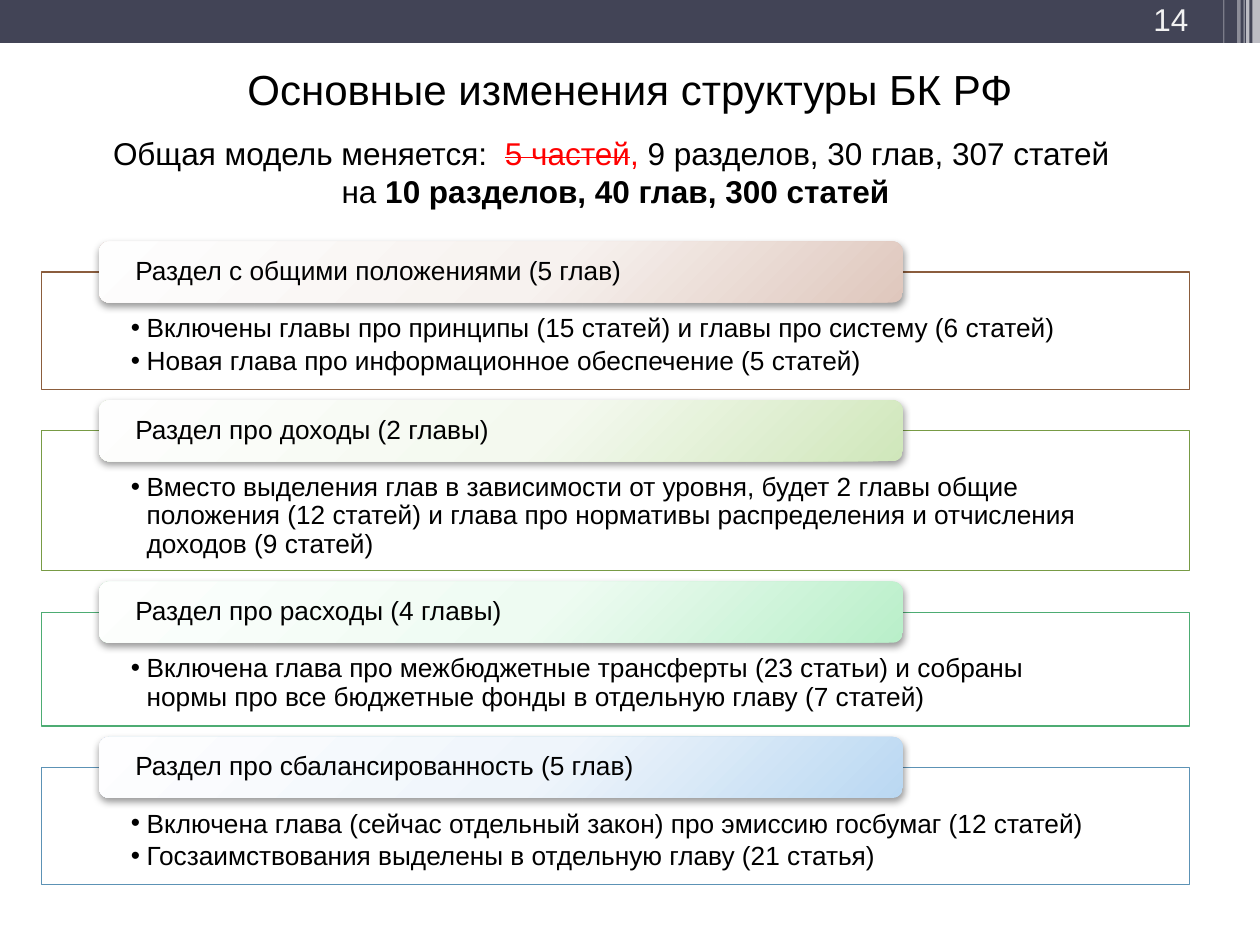
from dataclasses import dataclass

from lxml.etree import SubElement
from pptx import Presentation
from pptx.dml.color import RGBColor
from pptx.enum.shapes import MSO_SHAPE
from pptx.enum.text import MSO_ANCHOR, PP_ALIGN
from pptx.oxml import parse_xml
from pptx.oxml.ns import nsdecls, qn
from pptx.util import Pt

BLACK = RGBColor(0x00, 0x00, 0x00)
WHITE = RGBColor(0xFF, 0xFF, 0xFF)
RED = RGBColor(0xFF, 0x00, 0x00)
PALE = RGBColor(0xF2, 0xF2, 0xF2)
SLATE = RGBColor(0x42, 0x44, 0x56)

LEFT, WIDTH = 23.8, 656
FIRST_TOP, GAP = 155.5, 23.7
HEADER_LEFT, HEADER_WIDTH, HEADER_HEIGHT, HEADER_RISE = 56.6, 459.3, 34.9, 17.5


@dataclass
class Stripe:
    left: float
    width: float
    height: float
    alpha: int


@dataclass
class Section:
    heading: str
    bullets: list[str]
    height: float
    line: RGBColor
    stops: tuple[RGBColor, RGBColor, RGBColor]


STRIPES = [
    Stripe(715.7, 4.3, 49, 65),
    Stripe(712, 2, 49, 65),
    Stripe(710.6, 0.7, 49, 60),
    Stripe(707, 2, 49, 40),
    Stripe(699, 0.7, 46, 30),
]

SECTIONS = [
    Section(
        "Раздел с общими положениями (5 глав)",
        ["Включены главы про принципы (15 статей) и главы про систему (6 статей)",
         "Новая глава про информационное обеспечение (5 статей)"],
        67, RGBColor(0x8B, 0x5D, 0x3D),
        (RGBColor(0xFE, 0xFE, 0xFE), RGBColor(0xF7, 0xF2, 0xEF), RGBColor(0xDF, 0xC7, 0xBD)),
    ),
    Section(
        "Раздел про доходы (2 главы)",
        ["Вместо выделения глав в зависимости от уровня, будет 2 главы общие положения "
         "(12 статей) и глава про нормативы распределения и отчисления доходов (9 статей)"],
        80, RGBColor(0x78, 0x9B, 0x45),
        (RGBColor(0xFE, 0xFE, 0xFE), RGBColor(0xF4, 0xF9, 0xEF), RGBColor(0xD0, 0xE7, 0xBB)),
    ),
    Section(
        "Раздел про расходы (4 главы)",
        ["Включена глава про межбюджетные трансферты (23 статьи) и собраны нормы "
         "про все бюджетные фонды в отдельную главу (7 статей)"],
        65, RGBColor(0x4D, 0xAC, 0x73),
        (RGBColor(0xFE, 0xFF, 0xFE), RGBColor(0xEE, 0xFB, 0xF2), RGBColor(0xB9, 0xEF, 0xC9)),
    ),
    Section(
        "Раздел про сбалансированность (5 глав)",
        ["Включена глава (сейчас отдельный закон) про эмиссию госбумаг (12 статей)",
         "Госзаимствования выделены в отдельную главу (21 статья)"],
        67, RGBColor(0x5C, 0x92, 0xB5),
        (RGBColor(0xFE, 0xFE, 0xFF), RGBColor(0xEF, 0xF5, 0xFB), RGBColor(0xBA, 0xD8, 0xF2)),
    ),
]


def add_text(p, text: str, *, size=15, color=BLACK, bold=False, strike=False, align=None) -> None:
    r = p.add_run()
    r.text = text
    r.font.name, r.font.size, r.font.bold = "Arial", Pt(size), bold
    r.font.color.rgb = color
    if strike:
        r.font._element.set("strike", "sngStrike")
    if align is not None:
        p.alignment = align


def set_frame(tf, anchor, insets=(7.2, 3.6, 7.2, 3.6)) -> None:
    tf.word_wrap = True
    tf.vertical_anchor = anchor
    tf.margin_left, tf.margin_top, tf.margin_right, tf.margin_bottom = map(Pt, insets)


def add_box(s, kind, left, top, width, height, fill, alpha=100, line=None):
    sp = s.shapes.add_shape(kind, Pt(left), Pt(top), Pt(width), Pt(height))
    sp.shadow.inherit = False
    sp.fill.solid()
    sp.fill.fore_color.rgb = fill
    if alpha < 100:
        color = sp._element.spPr.find(qn("a:solidFill"))[0]
        SubElement(color, qn("a:alpha"), val=str(alpha * 1000))
    if line is None:
        sp.line.fill.background()
    else:
        sp.line.color.rgb = line
        sp.line.width = Pt(0.75)
    return sp


def add_textbox(s, left, top, width, height, anchor):
    tf = s.shapes.add_textbox(Pt(left), Pt(top), Pt(width), Pt(height)).text_frame
    set_frame(tf, anchor)
    return tf


def set_bullet(p) -> None:
    pPr = p._p.get_or_add_pPr()
    pPr.set("marL", str(Pt(9)))
    pPr.set("indent", str(-Pt(9)))
    SubElement(pPr, qn("a:buFont"), typeface="Arial")
    SubElement(pPr, qn("a:buChar"), char="•")


def set_glow(sp, stops) -> None:
    marks = "".join(
        f'<a:gs pos="{pos}000"><a:srgbClr val="{color}"/></a:gs>'
        for pos, color in zip((0, 55, 100), stops)
    )
    spPr = sp._element.spPr
    spPr.replace(spPr.find(qn("a:solidFill")), parse_xml(
        f'<a:gradFill {nsdecls("a")} rotWithShape="1"><a:gsLst>{marks}</a:gsLst>'
        '<a:path path="circle"><a:fillToRect l="-40000" t="-90000" r="140000" b="190000"/>'
        '</a:path></a:gradFill>'))
    spPr.find(qn("a:effectLst")).append(parse_xml(
        f'<a:outerShdw {nsdecls("a")} blurRad="{Pt(4.1)}" dist="{Pt(2)}" dir="5400000" '
        'rotWithShape="0"><a:srgbClr val="000000"><a:alpha val="40000"/></a:srgbClr>'
        '</a:outerShdw>'))


def add_section(s, section: Section, top: float) -> None:
    body = add_box(s, MSO_SHAPE.RECTANGLE, LEFT, top, WIDTH, section.height,
                   WHITE, 90, section.line)
    tf = body.text_frame
    set_frame(tf, MSO_ANCHOR.TOP, (51, 24.5, 51, 8.5))
    for i, bullet in enumerate(section.bullets):
        p = tf.add_paragraph() if i else tf.paragraphs[0]
        p.line_spacing, p.space_after = 0.9, Pt(2.6)
        add_text(p, bullet, align=PP_ALIGN.LEFT)
        set_bullet(p)

    header = add_box(s, MSO_SHAPE.ROUNDED_RECTANGLE, HEADER_LEFT, top - HEADER_RISE,
                     HEADER_WIDTH, HEADER_HEIGHT, section.stops[0])
    set_glow(header, section.stops)
    set_frame(header.text_frame, MSO_ANCHOR.MIDDLE, (19, 0, 19, 0))
    p = header.text_frame.paragraphs[0]
    p.line_spacing = 0.9
    add_text(p, section.heading, align=PP_ALIGN.LEFT)


def main() -> None:
    prs = Presentation()
    prs.slide_width, prs.slide_height = Pt(720), Pt(540)
    s = prs.slides.add_slide(prs.slide_layouts[5])

    add_box(s, MSO_SHAPE.RECTANGLE, 0, 0, 720, 24.5, SLATE)
    for stripe in STRIPES:
        add_box(s, MSO_SHAPE.RECTANGLE, stripe.left, 0, stripe.width, stripe.height,
                WHITE, stripe.alpha)

    title = s.shapes.title
    title.left, title.top, title.width, title.height = Pt(36), Pt(32), Pt(648), Pt(37.5)
    set_frame(title.text_frame, MSO_ANCHOR.MIDDLE)
    add_text(title.text_frame.paragraphs[0], "Основные изменения структуры БК РФ",
             size=24, align=PP_ALIGN.CENTER)

    tf = add_textbox(s, 629.3, 1.4, 56.9, 23.8, MSO_ANCHOR.BOTTOM)
    add_text(tf.paragraphs[0], "14", size=18, color=PALE, align=PP_ALIGN.RIGHT)

    tf = add_textbox(s, LEFT, 71.3, WIDTH, 54, MSO_ANCHOR.MIDDLE)
    p = tf.paragraphs[0]
    add_text(p, "Общая модель меняется:  ", size=18, align=PP_ALIGN.CENTER)
    add_text(p, "5 частей", size=18, color=RED, strike=True)
    add_text(p, ",", size=18, color=RED)
    add_text(p, " 9 разделов, 30 глав, 307 статей ", size=18)
    p = tf.add_paragraph()
    add_text(p, "на ", size=18, align=PP_ALIGN.CENTER)
    add_text(p, "10 разделов, 40 глав, 300 статей", size=18, bold=True)

    top = FIRST_TOP
    for section in SECTIONS:
        add_section(s, section, top)
        top += section.height + GAP

    prs.save("out.pptx")


if __name__ == "__main__":
    main()
